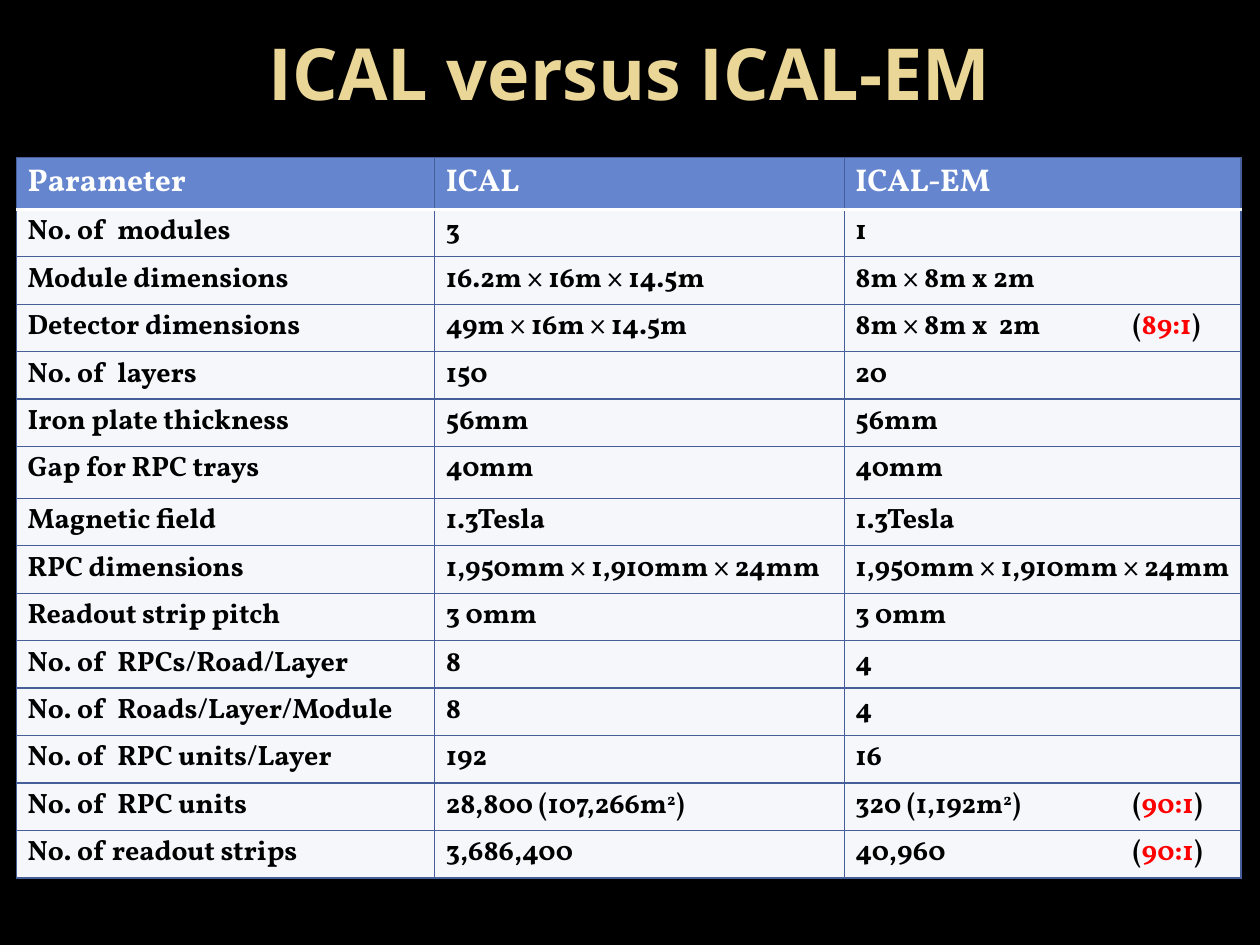
"""Build a slide with a table comparing the ICAL and ICAL-EM detectors."""
from lxml.etree import SubElement
from pptx import Presentation
from pptx.dml.color import RGBColor
from pptx.enum.text import MSO_ANCHOR, PP_ALIGN
from pptx.oxml.ns import qn
from pptx.util import Inches, Pt

COLORS = {
    "background": "000000", "title": "EAD696", "header": "6585CF", "body": "F5F7FB",
    "border": "465F9A", "white": "FFFFFF", "text": "000000", "ratio": "FF0000",
}
TITLE = "ICAL versus ICAL-EM"
HEADERS = ("Parameter", "ICAL", "ICAL-EM")
SQUARE = ("2", "superscript")
ROWS = [
    ("No. of  modules", "3", "1"),
    ("Module dimensions", "16.2m × 16m × 14.5m", "8m × 8m x 2m"),
    ("Detector dimensions", "49m × 16m × 14.5m", ["8m × 8m x  2m\t(", ("89:1", "ratio"), ")"]),
    ("No. of  layers", "150", "20"),
    ("Iron plate thickness", "56mm", "56mm"),
    ("Gap for RPC trays", "40mm", "40mm"),
    ("Magnetic field", "1.3Tesla", "1.3Tesla"),
    ("RPC dimensions", "1,950mm × 1,910mm × 24mm", "1,950mm × 1,910mm × 24mm"),
    ("Readout strip pitch", "3 0mm", "3 0mm"),
    ("No. of  RPCs/Road/Layer", "8", "4"),
    ("No. of  Roads/Layer/Module", "8", "4"),
    ("No. of  RPC units/Layer", "192", "16"),
    ("No. of  RPC units", ["28,800 (107,266m", SQUARE, ")"],
     ["320 (1,192m", SQUARE, ")\t(", ("90:1", "ratio"), ")"]),
    ("No. of readout strips", "3,686,400", ["40,960\t(", ("90:1", "ratio"), ")"]),
]
COLUMN_WIDTHS = (3.32, 3.25, 3.15)
TABLE_LEFT, TABLE_TOP, TABLE_HEIGHT = 0.13, 1.25, 5.72
TALL_ROW = 0.41
TALL_ROWS = (0, 6)
RATIO_TAB = 2.2


def rgb(name):
    return RGBColor.from_string(COLORS[name])


def style_font(font, name, size, color):
    font.name, font.size, font.bold = name, Pt(size), True
    font.color.rgb = rgb(color)


def add_border(cell, side, color, width):
    line = SubElement(cell._tc.get_or_add_tcPr(), qn(f"a:ln{side}"), w=str(Pt(width)))
    fill = SubElement(line, qn("a:solidFill"))
    SubElement(fill, qn("a:srgbClr"), val=COLORS[color])


def add_tab_stop(paragraph, position):
    tabs = SubElement(paragraph._p.get_or_add_pPr(), qn("a:tabLst"))
    SubElement(tabs, qn("a:tab"), pos=str(Inches(position)), algn="l")


def fill_cell(cell, content, row_index):
    is_header = row_index == 0
    white_side = {0: "B", 1: "T"}.get(row_index)
    for side in "LRTB":
        add_border(cell, side, *(("white", 2) if side == white_side else ("border", 0.75)))
    cell.fill.solid()
    cell.fill.fore_color.rgb = rgb("header" if is_header else "body")
    cell.margin_left = cell.margin_right = Inches(0.09)
    cell.margin_top = cell.margin_bottom = Inches(0.03)

    pieces = [content] if isinstance(content, str) else content
    paragraph = cell.text_frame.paragraphs[0]
    if any("\t" in piece for piece in pieces):
        add_tab_stop(paragraph, RATIO_TAB)
    for piece in pieces:
        text, role = (piece, None) if isinstance(piece, str) else piece
        run = paragraph.add_run()
        run.text = text
        color = "white" if is_header else "ratio" if role == "ratio" else "text"
        style_font(run.font, "Vollkorn", 18 if is_header else 16, color)
        if role == "superscript":
            run._r.get_or_add_rPr().set("baseline", "30000")


def add_title(slide):
    title = slide.shapes.add_textbox(Inches(0.08), Inches(0.08), Inches(9.84), Inches(0.98))
    frame = title.text_frame
    frame.word_wrap = True
    frame.vertical_anchor = MSO_ANCHOR.MIDDLE
    frame.text = TITLE
    paragraph = frame.paragraphs[0]
    paragraph.alignment = PP_ALIGN.CENTER
    style_font(paragraph.runs[0].font, "Open Sans", 41, "title")


def add_comparison(slide):
    contents = [HEADERS, *ROWS]
    table = slide.shapes.add_table(
        len(contents), len(HEADERS), Inches(TABLE_LEFT), Inches(TABLE_TOP),
        Inches(sum(COLUMN_WIDTHS)), Inches(TABLE_HEIGHT)).table
    for column, width in zip(table.columns, COLUMN_WIDTHS):
        column.width = Inches(width)
    tall_total = TALL_ROW * len(TALL_ROWS)
    normal_row = (TABLE_HEIGHT - tall_total) / (len(contents) - len(TALL_ROWS))
    for row_index, values in enumerate(contents):
        row = table.rows[row_index]
        row.height = Inches(TALL_ROW if row_index in TALL_ROWS else normal_row)
        for cell, content in zip(row.cells, values):
            fill_cell(cell, content, row_index)


def main():
    presentation = Presentation()
    presentation.slide_width, presentation.slide_height = Inches(10), Inches(7.5)
    slide = presentation.slides.add_slide(presentation.slide_layouts[6])
    slide.background.fill.solid()
    slide.background.fill.fore_color.rgb = rgb("background")
    add_title(slide)
    add_comparison(slide)
    presentation.save("out.pptx")


if __name__ == "__main__":
    main()
